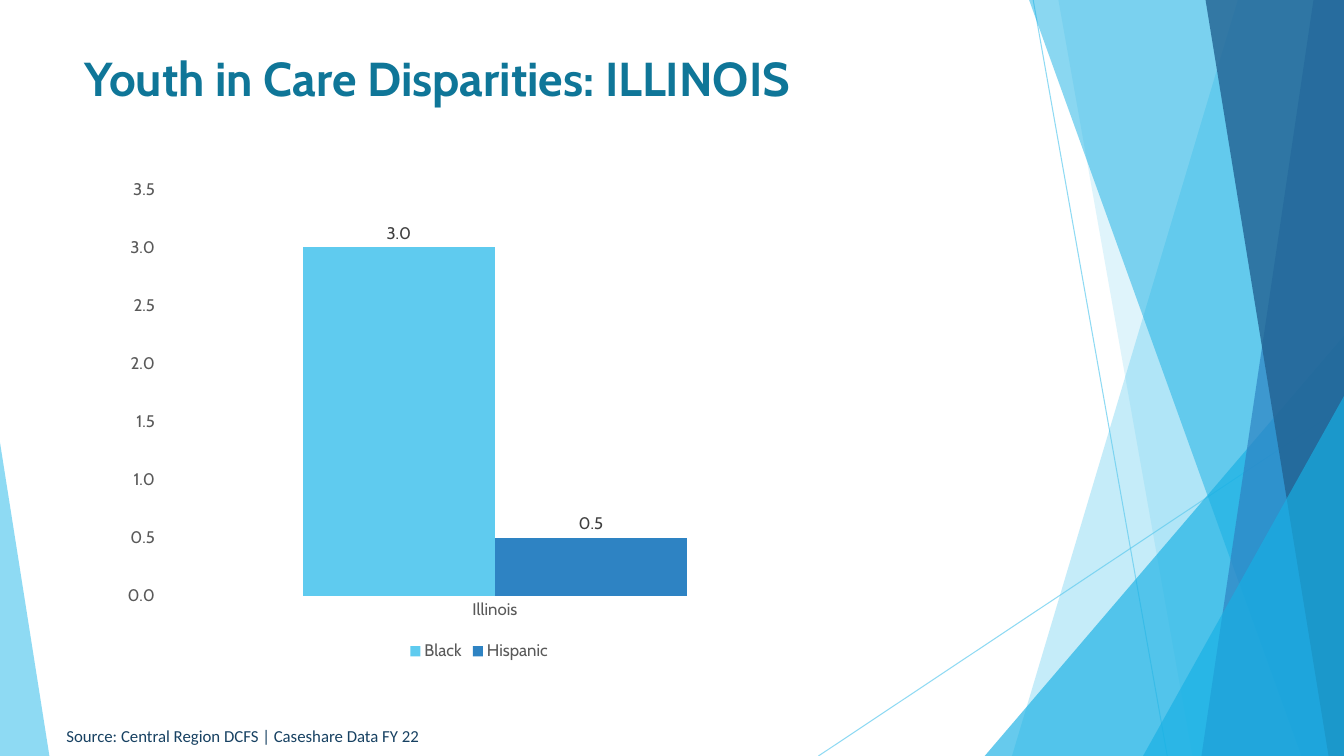
from lxml import etree
from pptx import Presentation
from pptx.chart.data import CategoryChartData
from pptx.dml.color import RGBColor
from pptx.enum.chart import (XL_CHART_TYPE, XL_LABEL_POSITION,
                             XL_LEGEND_POSITION, XL_TICK_MARK)
from pptx.enum.shapes import MSO_CONNECTOR, MSO_SHAPE
from pptx.enum.text import MSO_ANCHOR, MSO_AUTO_SIZE, PP_ALIGN
from pptx.oxml.ns import qn
from pptx.util import Pt

COLUMN = XL_CHART_TYPE.COLUMN_CLUSTERED
OUTSIDE = XL_LABEL_POSITION.OUTSIDE_END
BOTTOM = XL_LEGEND_POSITION.BOTTOM
NO_TICK = XL_TICK_MARK.NONE
LINE = MSO_CONNECTOR.STRAIGHT
TRIANGLE = MSO_SHAPE.ISOSCELES_TRIANGLE
MIDDLE = MSO_ANCHOR.MIDDLE
NO_FIT = MSO_AUTO_SIZE.NONE
LEFT = PP_ALIGN.LEFT

WIDTH, HEIGHT = 960, 540
SKY, CYAN, BLUE, NAVY = "5FCBEF", "17B0E4", "2E83C3", "226292"
TEAL, INK, GREY, DARK = "0F7698", "174162", "595959", "404040"


def paint(color, value):
    color.rgb = RGBColor.from_string(value)


def apply(target, values):
    for name, value in values.items():
        setattr(target, name, value)


def points(*values):
    return [Pt(value) for value in values]


class Deck:
    font = "Cabin"
    size = 12

    def __init__(self):
        self.prs = Presentation()
        apply(self.prs, {"slide_width": Pt(WIDTH), "slide_height": Pt(HEIGHT)})
        self.slide = self.prs.slides.add_slide(self.prs.slide_layouts[5])
        self.shapes = self.slide.shapes

    def style(self, font, color, **values):
        apply(font, {"name": self.font, "size": Pt(self.size), **values})
        paint(font.color, color)

    def fade(self, fill, alpha):
        """Set the opacity, in percent, of a solid fill."""
        tag = fill.find(".//" + qn("a:srgbClr"))
        etree.SubElement(tag, qn("a:alpha")).set("val", str(alpha * 1000))

    def fill(self, shape, color, alpha):
        shape.shadow.inherit = False
        shape.fill.solid()
        paint(shape.fill.fore_color, color)
        shape.line.fill.background()
        self.fade(shape._element.spPr, alpha)

    def line(self, ends, color, alpha):
        line = self.shapes.add_connector(LINE, *points(*ends))
        line.line.width = Pt(0.75)
        paint(line.line.color, color)
        self.fade(line._element.spPr, alpha)
        etree.SubElement(line._element.spPr, qn("a:effectLst"))

    def band(self, top, base, color, alpha):
        """Fill from a slanted left edge to the right side of the slide."""
        form = self.shapes.build_freeform(*points(top, 0))
        corners = (WIDTH, 0), (WIDTH, HEIGHT), (base, HEIGHT)
        form.add_line_segments([points(*spot) for spot in corners])
        self.fill(form.convert_to_shape(), color, alpha)

    def wedge(self, left, top, right, peak, color, alpha):
        """Stand a triangle on the bottom edge of the slide."""
        box = points(left, top, right - left, HEIGHT - top)
        shape = self.shapes.add_shape(TRIANGLE, *box)
        shape.adjustments[0] = peak
        self.fill(shape, color, alpha)

    def label(self, shape, text, color, **values):
        frame = shape.text_frame
        apply(frame, {"word_wrap": True, "auto_size": NO_FIT,
                      "vertical_anchor": MIDDLE})
        para = frame.paragraphs[0]
        para.alignment = LEFT
        run = para.add_run()
        run.text = text
        self.style(run.font, color, **values)

    def title(self, box, text):
        shape = self.shapes.title
        apply(shape, dict(zip(("left", "top", "width", "height"),
                              points(*box))))
        self.label(shape, text, TEAL, size=Pt(34), bold=True)

    def note(self, box, text):
        shape = self.shapes.add_textbox(*points(*box))
        self.label(shape, text, INK, name="Calibri")

    def chart(self, box, cats, rows):
        data = CategoryChartData(number_format="0.0")
        data.categories = cats
        for name, values, _ in rows:
            data.add_series(name, values)
        chart = self.shapes.add_chart(COLUMN, *points(*box), data).chart
        apply(chart, {"has_title": False, "has_legend": True})
        self.style(chart.font, GREY)

        # Legend and axes
        apply(chart.legend, {"position": BOTTOM, "include_in_layout": False})
        self.style(chart.legend.font, GREY)
        for axis in (chart.category_axis, chart.value_axis):
            apply(axis, {"major_tick_mark": NO_TICK,
                         "minor_tick_mark": NO_TICK,
                         "has_major_gridlines": False})
            axis.format.line.fill.background()
            self.style(axis.tick_labels.font, GREY)
        apply(chart.value_axis, {"minimum_scale": 0, "maximum_scale": 3.5,
                                 "major_unit": 0.5})
        apply(chart.value_axis.tick_labels,
              {"number_format": "0.0", "number_format_is_linked": False})

        # Columns and their values
        plot = chart.plots[0]
        apply(plot, {"gap_width": 150, "overlap": 0, "vary_by_categories": False})
        for bar, (_, _, color) in zip(plot.series, rows):
            bar.format.fill.solid()
            paint(bar.format.fill.fore_color, color)
            labels = bar.data_labels
            apply(labels, {"show_value": True, "position": OUTSIDE,
                           "number_format": "0.0",
                           "number_format_is_linked": False})
            self.style(labels.font, DARK)


def main():
    deck = Deck()

    # Faceted backdrop, from back to front
    for ends in ((738, 0, 833.8, HEIGHT), (WIDTH, 290.2, 584.6, HEIGHT)):
        deck.line(ends, SKY, 70)
    deck.band(884.2, 722.9, SKY, 36)
    deck.band(756, 851.8, SKY, 20)
    deck.wedge(703.4, 239.8, WIDTH, 1, CYAN, 66)
    deck.band(735.1, 929.5, CYAN, 50)
    deck.band(938.2, 858.2, BLUE, 70)
    deck.band(861.1, 949, NAVY, 80)
    deck.wedge(816.5, 283, WIDTH, 1, CYAN, 66)
    deck.wedge(0, 316.1, 35.3, 0, SKY, 70)

    # Title, chart and source
    deck.title((53.3, 29.5, 676.8, 51.8),
               "Youth in Care Disparities: ILLINOIS")
    deck.chart((80.6, 121, 523.4, 354.2), ["Illinois"],
               [("Black", [3.0], SKY), ("Hispanic", [0.5], BLUE)])
    deck.note((40.3, 514.8, 290, 21.6),
              "Source: Central Region DCFS | Caseshare Data FY 22")

    deck.prs.save("out.pptx")


if __name__ == "__main__":
    main()
